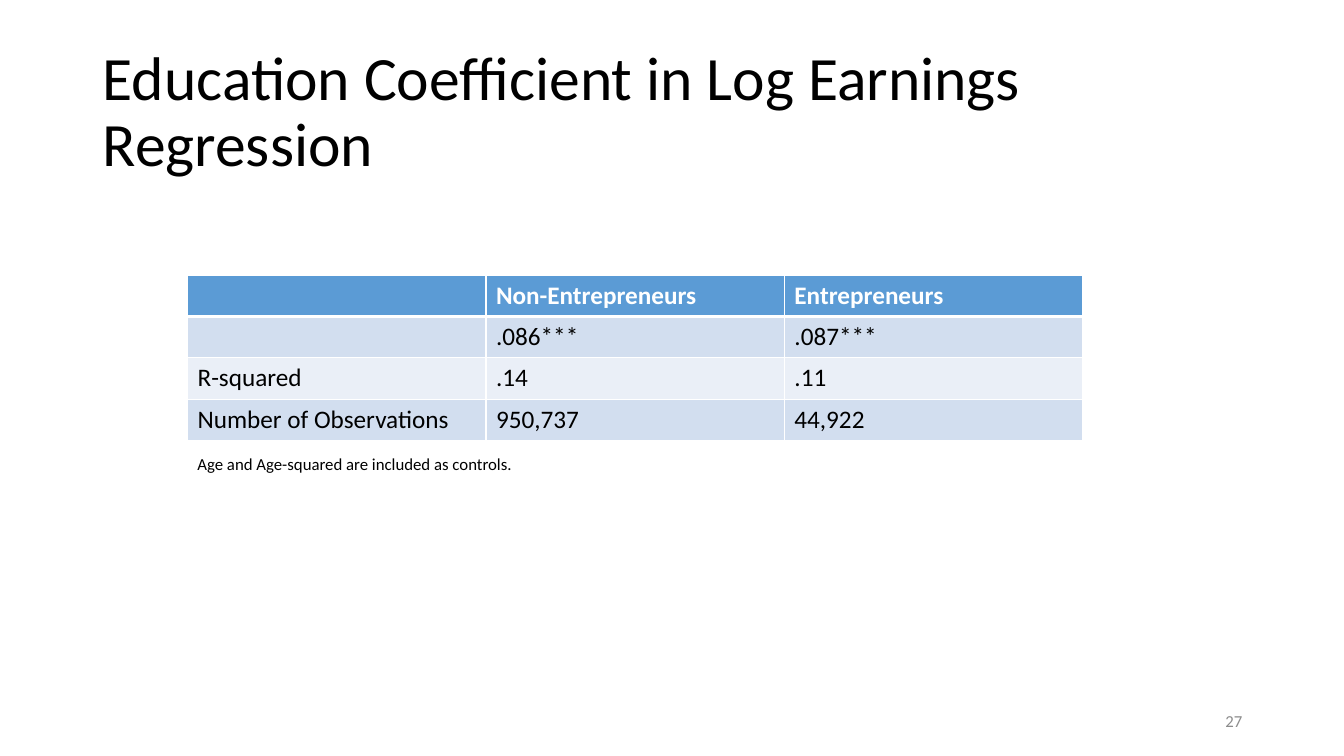
from lxml import etree
from pptx import Presentation
from pptx import util as u
from pptx.dml.color import RGBColor
from pptx.enum import text
from pptx.oxml import ns

TITLE = "Education Coefficient in Log Earnings Regression"
RESULTS = [
    ("", "Non-Entrepreneurs", "Entrepreneurs"),
    ("", ".086***", ".087***"),
    ("R-squared", ".14", ".11"),
    ("Number of Observations", "950,737", "44,922"),
]
NOTE = "Age and Age-squared are included as controls."
PAGE = "27"

FONT = "Calibri"
BLACK, WHITE, GREY = "000000", "FFFFFF", "8C8C8C"
HEADER, BANDS = "5B9BD5", ("EAEFF7", "D2DEEF")
TABLE_LEFT, TABLE_TOP = 1.86, 2.73
COLUMN, ROW = 2.96, 0.41


def color(value):
    return RGBColor.from_string(value)


def style(paragraph, size, ink, bold=False):
    font = paragraph.font
    for part in [font] + [run.font for run in paragraph.runs]:
        part.name, part.size, part.bold = FONT, u.Pt(size), bold
        part.color.rgb = color(ink)


def add_text(slide, words, box, size, ink=BLACK, anchor=text.MSO_ANCHOR.MIDDLE):
    frame = slide.shapes.add_textbox(*map(u.Inches, box)).text_frame
    frame.word_wrap = True
    frame.vertical_anchor = anchor
    frame.text = words
    style(frame.paragraphs[0], size, ink)
    return frame


def add_borders(cell, widths):
    """Draw white cell borders; widths in points, by side."""
    properties = cell._tc.get_or_add_tcPr()
    for place, side in enumerate("LRTB"):
        line = etree.Element(ns.qn(f"a:ln{side}"), w=str(u.Pt(widths.get(side, 1))))
        fill = etree.SubElement(line, ns.qn("a:solidFill"))
        etree.SubElement(fill, ns.qn("a:srgbClr"), val=WHITE)
        properties.insert(place, line)


def add_results(slide):
    rows, columns = len(RESULTS), len(RESULTS[0])
    box = (TABLE_LEFT, TABLE_TOP, columns * COLUMN, rows * ROW)
    table = slide.shapes.add_table(rows, columns, *map(u.Inches, box)).table
    for r, row in enumerate(RESULTS):
        table.rows[r].height = u.Inches(ROW)
        for c, words in enumerate(row):
            cell = table.cell(r, c)
            cell.text = words
            style(cell.text_frame.paragraphs[0], 18, BLACK if r else WHITE, r == 0)
            cell.fill.solid()
            cell.fill.fore_color.rgb = color(BANDS[r % 2] if r else HEADER)
            add_borders(cell, {0: {"B": 3}, 1: {"T": 3}}.get(r, {}))


def main():
    deck = Presentation()
    deck.slide_width, deck.slide_height = u.Inches(13.33), u.Inches(7.5)
    slide = deck.slides.add_slide(deck.slide_layouts[6])

    title = add_text(slide, TITLE, (0.92, 0.4, 11.5, 1.45), 44)
    title.paragraphs[0].line_spacing = 0.9
    page = add_text(slide, PAGE, (9.42, 6.95, 3, 0.4), 12, GREY)
    page.paragraphs[0].alignment = text.PP_ALIGN.RIGHT
    add_results(slide)
    note_top = TABLE_TOP + len(RESULTS) * ROW + 0.08
    note = add_text(slide, NOTE, (TABLE_LEFT, note_top, 8.47, 0.3), 12,
                    anchor=text.MSO_ANCHOR.TOP)
    note.auto_size = text.MSO_AUTO_SIZE.SHAPE_TO_FIT_TEXT
    deck.save("out.pptx")


if __name__ == "__main__":
    main()
